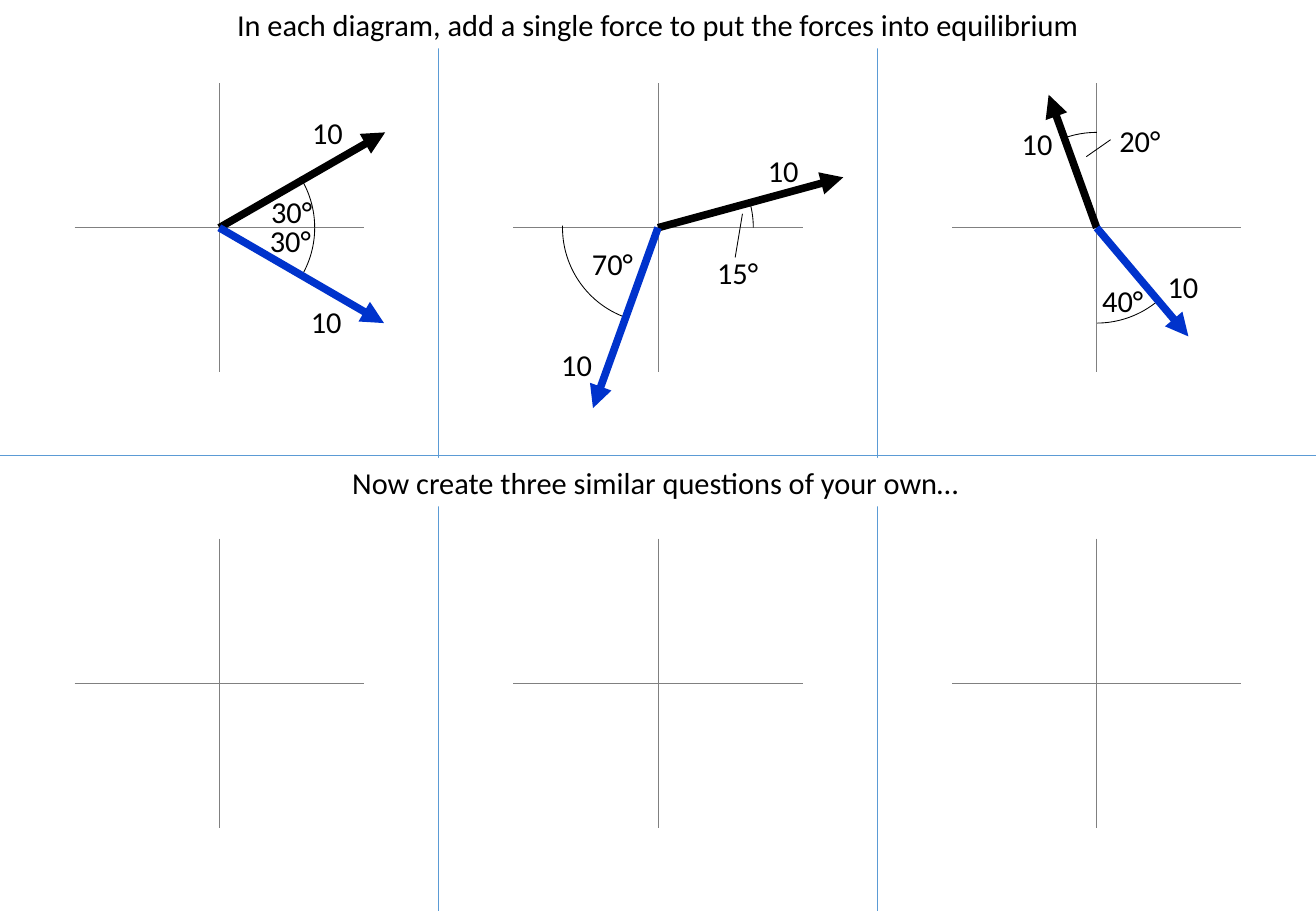
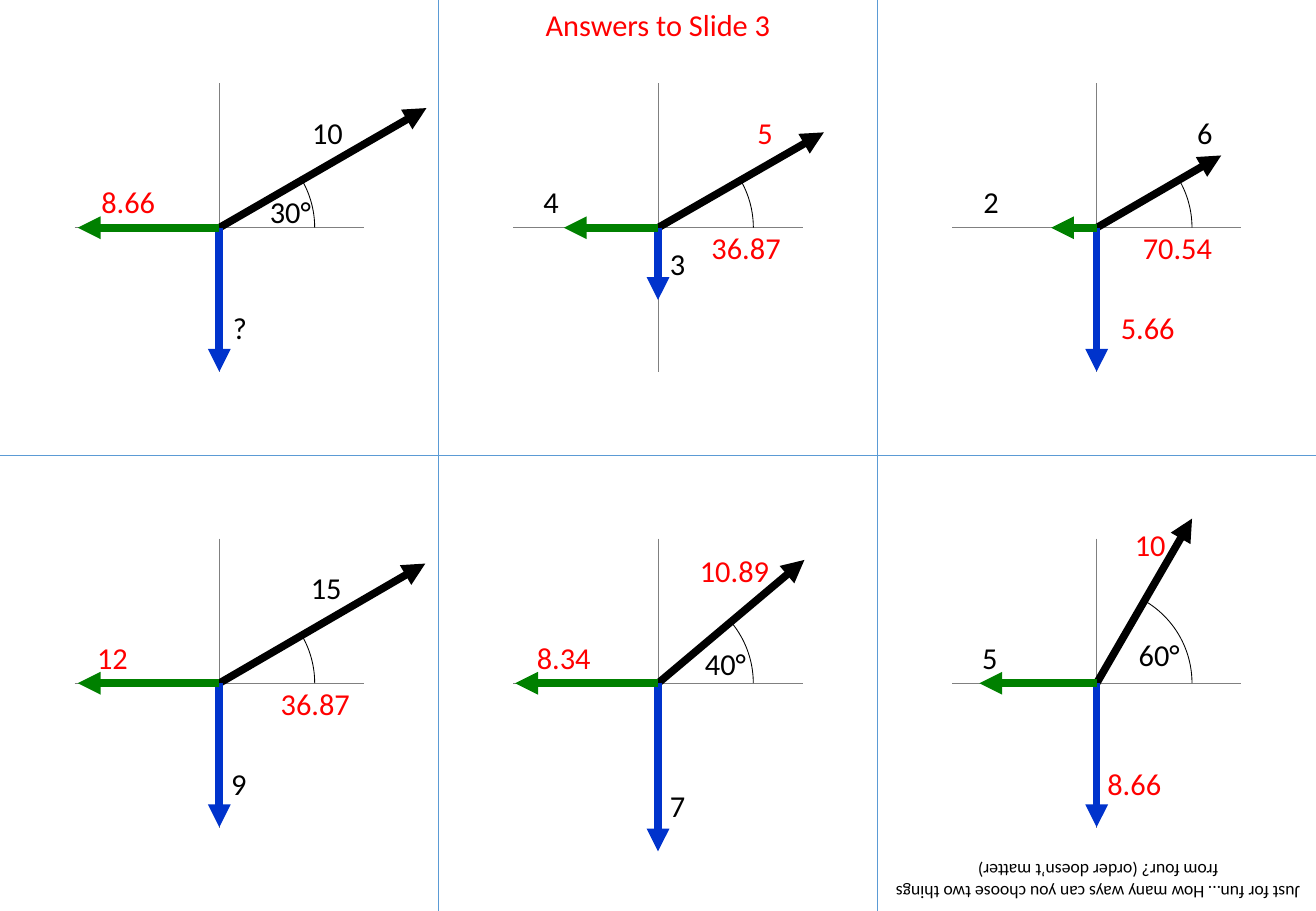
"""Build two slides of force diagrams in a three by two grid of panels."""
from lxml.etree import SubElement
from pptx import Presentation
from pptx.dml.color import RGBColor
from pptx.enum.shapes import MSO_CONNECTOR, MSO_SHAPE
from pptx.enum.text import MSO_AUTO_SIZE, PP_ALIGN
from pptx.oxml.ns import qn
from pptx.util import Inches, Pt

COLORS = {"black": "000000", "blue": "0033CC", "green": "008000", "red": "FF0000",
          "white": "FFFFFF", "axis": "808080", "divider": "5B9BD5"}
FONT = "Calibri"
SLIDE_W, SLIDE_H = 10.83, 7.5
COLUMNS, ROWS = 3, 2
PANEL_W, PANEL_H = SLIDE_W / COLUMNS, SLIDE_H / ROWS
MID_X, MID_Y = PANEL_W / 2, PANEL_H / 2
AXIS_REACH = 1.19
ARC_SIZE = 1.57
LABEL_H = 0.4
ADJUSTMENT_PER_DEGREE = 0.6


def add_line(shapes, x1, y1, x2, y2, color, width=0.5, arrow=False):
    line = shapes.add_connector(MSO_CONNECTOR.STRAIGHT, Inches(x1), Inches(y1),
                                Inches(x2), Inches(y2))
    line.line.color.rgb = RGBColor.from_string(COLORS[color])
    line.line.width = Pt(width)
    properties = line.element.spPr
    if arrow:
        SubElement(properties.find(qn("a:ln")), qn("a:tailEnd"), type="triangle")
    SubElement(properties, qn("a:effectLst"))


def add_label(shapes, text, left, top, width, color="black", size=18, height=LABEL_H, fill=None):
    label = shapes.add_textbox(Inches(left), Inches(top), Inches(width), Inches(height))
    if fill:
        label.fill.solid()
        label.fill.fore_color.rgb = RGBColor.from_string(COLORS[fill])
    frame = label.text_frame
    frame.word_wrap = True
    frame.auto_size = MSO_AUTO_SIZE.SHAPE_TO_FIT_TEXT
    frame.text = text
    paragraph = frame.paragraphs[0]
    paragraph.alignment = PP_ALIGN.CENTER
    font = paragraph.runs[0].font
    font.name, font.size = FONT, Pt(size)
    font.color.rgb = RGBColor.from_string(COLORS[color])
    return label


questions = [
    {"forces": [("black", 3.17, 1.09), ("blue", 3.16, 2.66)],
     "arcs": [(327.8, 31.1)],
     "labels": [("10", 2.42, 0.89, 0.55), ("30°", 2.04, 1.54, 0.72),
                ("30°", 2.03, 1.78, 0.72), ("10", 2.41, 2.45, 0.55)],
     "pointers": []},
    {"forces": [("black", 3.33, 1.46), ("blue", 1.27, 3.36)],
     "arcs": [(345.1, 0), (109.1, 181.2)],
     "labels": [("10", 2.56, 1.2, 0.55), ("15°", 2.1, 2.04, 0.72),
                ("70°", 1.07, 1.97, 0.72), ("10", 0.86, 2.8, 0.55)],
     "pointers": [(2.44, 2.12, 2.5, 1.76)]},
    {"forces": [("black", 1.41, 0.78), ("blue", 2.56, 2.77)],
     "arcs": [(250, 270.2), (49.1, 89.6)],
     "labels": [("10", 1.04, 0.98, 0.55), ("20°", 1.8, 0.96, 0.72),
                ("40°", 1.66, 2.27, 0.72), ("10", 2.24, 2.16, 0.55)],
     "pointers": [(1.72, 1.29, 1.92, 1.15)]},
]

answer_values = [
    ((3.51, 0.89), 3.06, 0.64, 327.8,
     [("10", 2.42, 0.89, 0.55), ("30°", 2.03, 1.54, 0.72),
      ("8.66", 0.65, 1.46, 0.81, "red"), ("?", 1.7, 2.5, 0.55)]),
    ((3.17, 1.09), 2.47, 1.03, 328.9,
     [("5", 2.41, 0.89, 0.55, "red"), ("36.87", 2.07, 1.84, 0.92, "red"),
      ("4", 0.65, 1.46, 0.55), ("3", 1.69, 1.97, 0.55)]),
    ((2.83, 1.28), 3.06, 1.43, 328.3,
     [("6", 2.42, 0.89, 0.55), ("70.54", 1.89, 1.84, 1.16, "red"),
      ("2", 0.66, 1.46, 0.55), ("5.66", 1.7, 2.5, 1.05, "red")]),
    ((3.5, 0.89), 3.06, 0.64, 327.8,
     [("15", 2.41, 0.89, 0.55), ("36.87", 1.99, 1.84, 1.21, "red"),
      ("12", 0.65, 1.46, 0.55, "red"), ("9", 1.69, 2.5, 0.55)]),
    ((3.01, 0.86), 3.26, 0.63, 321,
     [("10.89", 1.97, 0.75, 0.93, "red"), ("40°", 2, 1.51, 0.72),
      ("8.34", 0.65, 1.46, 0.76, "red"), ("7", 1.69, 2.68, 0.55)]),
    ((2.59, 0.52), 3.06, 0.84, 299.7,
     [("10", 1.97, 0.53, 0.55, "red"), ("60°", 1.96, 1.44, 0.72),
      ("5", 0.65, 1.46, 0.55), ("8.66", 1.7, 2.5, 0.83, "red")]),
]
answers = [
    {"forces": [("black", *slanted_tip), ("blue", MID_X, down_tip), ("green", left_tip, MID_Y)],
     "arcs": [(arc_start, 0)], "labels": labels, "pointers": []}
    for slanted_tip, down_tip, left_tip, arc_start, labels in answer_values
]

presentation = Presentation()
presentation.slide_width, presentation.slide_height = Inches(SLIDE_W), Inches(SLIDE_H)
slide_shapes = []

for diagrams in (questions, answers):
    shapes = presentation.slides.add_slide(presentation.slide_layouts[6]).shapes
    slide_shapes.append(shapes)
    add_line(shapes, 0, PANEL_H, SLIDE_W, PANEL_H, "divider")
    for column in range(1, COLUMNS):
        add_line(shapes, column * PANEL_W, 0, column * PANEL_W, SLIDE_H, "divider")

    for panel in range(COLUMNS * ROWS):
        row, column = divmod(panel, COLUMNS)
        x, y = column * PANEL_W + MID_X, row * PANEL_H + MID_Y
        axes = shapes.add_group_shape().shapes
        add_line(axes, x - AXIS_REACH, y, x + AXIS_REACH, y, "axis")
        add_line(axes, x, y - AXIS_REACH, x, y + AXIS_REACH, "axis")

    for panel, diagram in enumerate(diagrams):
        row, column = divmod(panel, COLUMNS)
        left, top = column * PANEL_W, row * PANEL_H
        for angles in diagram["arcs"]:
            arc = shapes.add_shape(MSO_SHAPE.ARC, Inches(left + MID_X - ARC_SIZE / 2),
                                   Inches(top + MID_Y - ARC_SIZE / 2),
                                   Inches(ARC_SIZE), Inches(ARC_SIZE))
            for index, degrees in enumerate(angles):
                arc.adjustments[index] = degrees * ADJUSTMENT_PER_DEGREE
            arc.shadow.inherit = False
            arc.fill.background()
            arc.line.color.rgb = RGBColor.from_string(COLORS["black"])
            arc.line.width = Pt(0.5)
        for color, tip_x, tip_y in diagram["forces"]:
            add_line(shapes, left + MID_X, top + MID_Y, left + tip_x, top + tip_y,
                     color, 4.5, arrow=True)
        for x1, y1, x2, y2 in diagram["pointers"]:
            add_line(shapes, left + x1, top + y1, left + x2, top + y2, "black")
        for text, label_x, label_y, *style in diagram["labels"]:
            add_label(shapes, text, left + label_x, top + label_y, *style)

question_shapes, answer_shapes = slide_shapes
add_label(question_shapes, "In each diagram, add a single force to put the forces into equilibrium",
          0, 0, SLIDE_W, fill="white")
add_label(question_shapes, "Now create three similar questions of your own…",
          -0.02, 3.77, SLIDE_W, fill="white")
add_label(answer_shapes, "Answers to Slide 3", 0, 0, SLIDE_W, "red")
puzzle = add_label(
    answer_shapes,
    "Just for fun… How many ways can you choose two things from four? (order doesn’t matter)",
    7.24, 7.04, 3.59, size=10.5, height=0.45, fill="white")
puzzle.rotation = 180

presentation.save("out.pptx")
